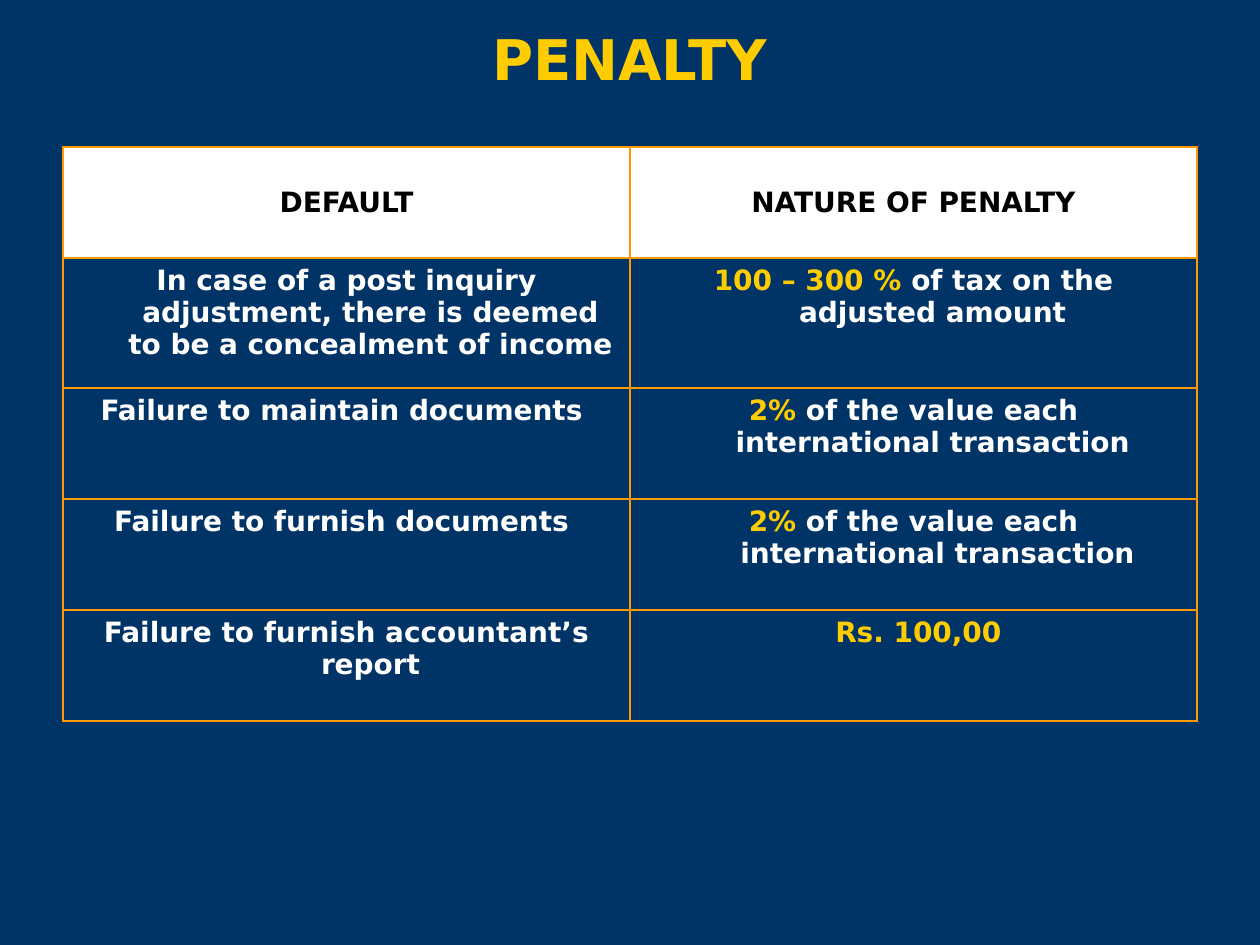
from lxml import etree
from pptx import Presentation
from pptx import util as u
from pptx.dml.color import RGBColor
from pptx.enum import text
from pptx.oxml.ns import qn

NAVY = RGBColor(0x00, 0x33, 0x66)
GOLD = RGBColor(0xFF, 0xCC, 0x00)
ORANGE = RGBColor(0xFF, 0x99, 0x00)
WHITE = RGBColor(0xFF, 0xFF, 0xFF)
BLACK = RGBColor(0x00, 0x00, 0x00)
FONT = "DejaVu Sans"
INDENT = 48

HEADER = ("DEFAULT", "NATURE OF PENALTY")
# Default, highlighted part of the penalty, rest of the penalty
PENALTIES = [
    ("In case of a post inquiry adjustment, there is deemed to be a concealment of income",
     "100 – 300 %", " of tax on the adjusted amount "),
    ("Failure to maintain documents ", "2%", " of the value each international transaction "),
    ("Failure to furnish documents ", "2%", " of the value each international transaction"),
    ("Failure to furnish accountant’s report", " Rs. 100,00", ""),
]
ROW_HEIGHTS = (111, 130, 111, 111, 111)


def px(n):
    return u.Emu(round(n * 914400 / 126))


def add_run(p, words, size, color):
    r = p.add_run()
    r.text = words
    r.font.name, r.font.size, r.font.bold = FONT, u.Pt(size), True
    r.font.color.rgb = color


def add_title(s, words, x, y, w, h):
    sp = s.shapes.title
    sp.left, sp.top, sp.width, sp.height = px(x), px(y), px(w), px(h)
    tf = sp.text_frame
    tf.vertical_anchor = text.MSO_ANCHOR.MIDDLE
    p = tf.paragraphs[0]
    p.alignment = text.PP_ALIGN.CENTER
    add_run(p, words, 32, GOLD)


def set_borders(cell):
    tc_pr = cell._tc.get_or_add_tcPr()
    for side in ("lnL", "lnR", "lnT", "lnB"):
        ln = etree.SubElement(tc_pr, qn(f"a:{side}"), w=str(u.Pt(1)))
        fill = etree.SubElement(ln, qn("a:solidFill"))
        etree.SubElement(fill, qn("a:srgbClr"), val=str(ORANGE))


def fill_cell(cell, parts, fill=None):
    """Write (words, colour) parts into a bordered cell with a hanging indent."""
    set_borders(cell)
    if fill is None:
        cell.fill.background()
    else:
        cell.fill.solid()
        cell.fill.fore_color.rgb = fill
    p = cell.text_frame.paragraphs[0]
    p.alignment = text.PP_ALIGN.CENTER
    p_pr = p._p.get_or_add_pPr()
    p_pr.set("marL", str(px(INDENT)))
    p_pr.set("indent", str(-px(INDENT)))
    for words, color in parts:
        if words:
            add_run(p, words, 16, color)


def add_penalty_table(s, x, y, w):
    frame = s.shapes.add_table(len(ROW_HEIGHTS), len(HEADER), px(x), px(y),
                               px(w), px(sum(ROW_HEIGHTS)))
    table = frame.table
    table.horz_banding = False
    for row, height in zip(table.rows, ROW_HEIGHTS):
        row.height = px(height)
    for col, words in enumerate(HEADER):
        cell = table.cell(0, col)
        fill_cell(cell, [(words, BLACK)], WHITE)
        cell.vertical_anchor = text.MSO_ANCHOR.MIDDLE
    for i, (default, amount, rest) in enumerate(PENALTIES, 1):
        fill_cell(table.cell(i, 0), [(default, WHITE)])
        fill_cell(table.cell(i, 1), [(amount, GOLD), (rest, WHITE)])


def main():
    prs = Presentation()
    prs.slide_width, prs.slide_height = px(1260), px(945)
    s = prs.slides.add_slide(prs.slide_layouts[5])
    s.background.fill.solid()
    s.background.fill.fore_color.rgb = NAVY
    add_title(s, "PENALTY", 63, 0, 1134, 116)
    add_penalty_table(s, 63, 147, 1134)
    prs.save("out.pptx")


if __name__ == "__main__":
    main()
